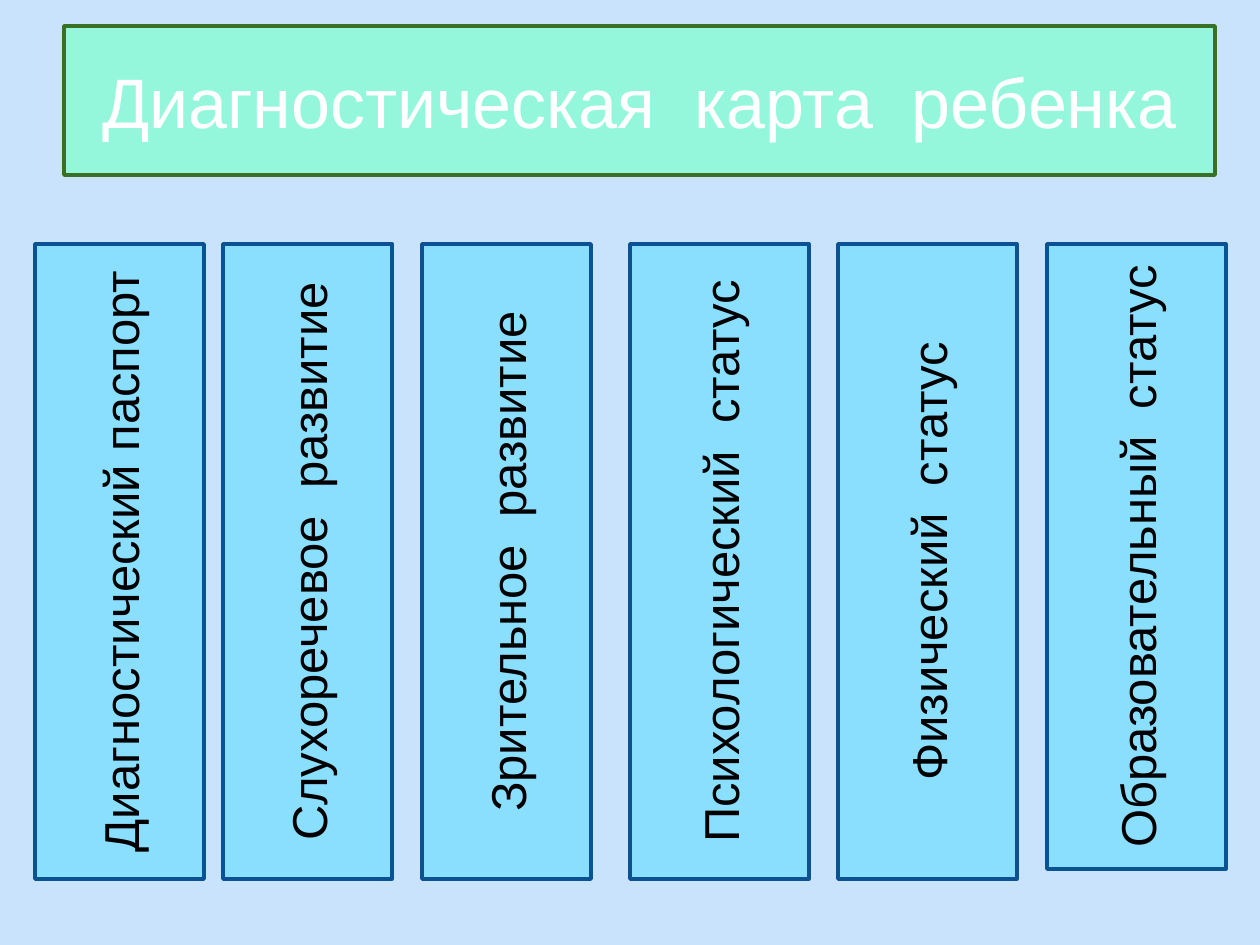
from pptx import Presentation
from pptx.dml.color import RGBColor
from pptx.enum.shapes import MSO_SHAPE
from pptx.enum.text import MSO_ANCHOR, PP_ALIGN
from pptx.util import Pt

EMU_PER_PX = 914400 / 126
COLORS = {
    "background": "C8E3FB",
    "title fill": "94F7DC",
    "title line": "387026",
    "title text": "FFFFFF",
    "column fill": "8ADFFF",
    "column line": "0B5292",
    "column text": "000000",
}
# label, left, width, height
COLUMNS = [
    ("Диагностический паспорт", 35, 169, 635),
    ("Слухоречевое  развитие", 223, 169, 635),
    ("Зрительное  развитие", 422, 169, 635),
    ("Психологический  статус", 630, 179, 635),
    ("Физический  статус", 838, 179, 635),
    ("Образовательный  статус", 1047, 179, 625),
]
COLUMN_TOP = 244


def px(length):
    return round(length * EMU_PER_PX)


def color(name):
    return RGBColor.from_string(COLORS[name])


class CardPage:
    font = "Arial"
    line_width = Pt(2)

    def __init__(self, deck):
        self.page = deck.slides.add_slide(deck.slide_layouts[5])
        background = self.page.background.fill
        background.solid()
        background.fore_color.rgb = color("background")

    def style(self, box, role, text, size):
        """Paint the box in the colours of its role and write its centred text."""
        box.fill.solid()
        box.fill.fore_color.rgb = color(f"{role} fill")
        box.line.color.rgb = color(f"{role} line")
        box.line.width = self.line_width
        frame = box.text_frame
        frame.word_wrap = True
        frame.vertical_anchor = MSO_ANCHOR.MIDDLE
        para = frame.paragraphs[0]
        para.alignment = PP_ALIGN.CENTER
        span = para.add_run()
        span.text = text
        span.font.name = self.font
        span.font.size = Pt(size)
        span.font.color.rgb = color(f"{role} text")

    def title(self, text, left, top, width, height):
        box = self.page.shapes.title
        box.left, box.top = px(left), px(top)
        box.width, box.height = px(width), px(height)
        self.style(box, "title", text, 40)

    def column(self, text, left, top, width, height):
        """Add a box whose text reads from bottom to top."""
        box = self.page.shapes.add_shape(
            MSO_SHAPE.RECTANGLE, px(left), px(top), px(width), px(height))
        box.shadow.inherit = False
        self.style(box, "column", text, 28)
        box.text_frame._txBody.bodyPr.set("vert", "vert270")


def main():
    deck = Presentation()
    deck.slide_width, deck.slide_height = px(1260), px(945)
    card = CardPage(deck)
    card.title("Диагностическая  карта  ребенка", 64, 26, 1151, 149)
    for label, left, width, height in COLUMNS:
        card.column(label, left, COLUMN_TOP, width, height)
    deck.save("out.pptx")


if __name__ == "__main__":
    main()
